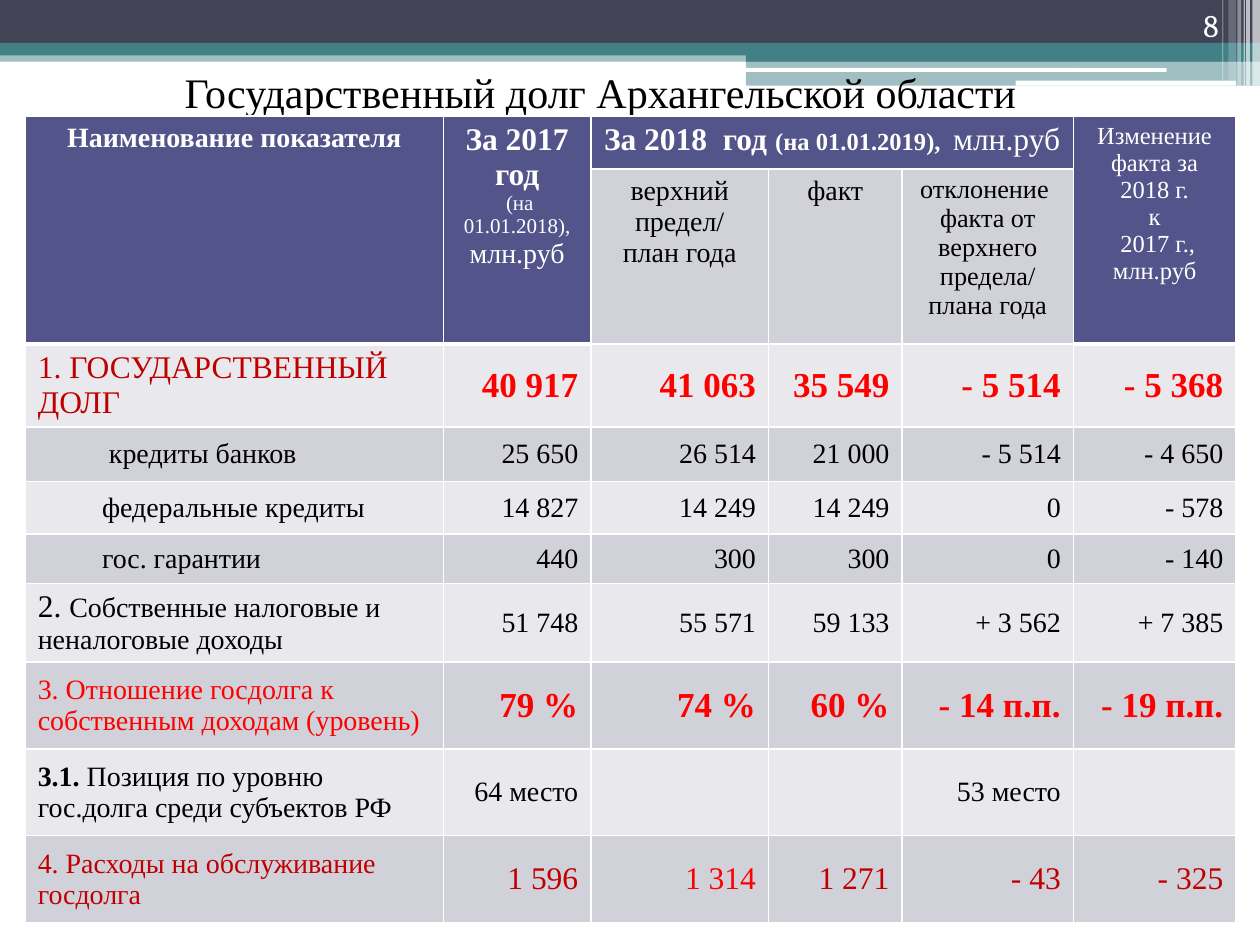
from lxml import etree
from pptx import Presentation
from pptx import util as u
from pptx.dml.color import RGBColor
from pptx.enum import shapes, text
from pptx.oxml import ns

Inches, Pt = u.Inches, u.Pt
SERIF = "Times New Roman"
COLORS = {
    "navy": "424456", "teal": "438086", "white": "FFFFFF", "black": "000000",
    "head": "53548A", "dark": "D1D1DA", "light": "E9E9ED",
    "red": "FF0000", "wine": "C00000",
}
COLS = [3.32, 1.17, 1.41, 1.06, 1.36, 1.29]
ROWS = [0.42, 1.39, 0.66, 0.43, 0.42, 0.39, 0.62, 0.69, 0.69, 0.69]

HEADS = [
    (0, 0, 1, 0, "head", 16, "white", True, [["Наименование показателя"]]),
    (0, 1, 1, 1, "head", 18, "white", True, [
        ["За 2017 год"],
        [(" ", 12, True), ("(на 01.01.2018), ", 12, False), ("млн.руб", 16, False)]]),
    (0, 2, 0, 4, "head", 18, "white", True, [
        ["За 2018  год ", ("(на 01.01.2019),  ", 14, True), ("млн.руб", 18, False)]]),
    (0, 5, 1, 5, "head", 14, "white", False,
     [["Изменение факта за 2018 г."], [" к "], [" 2017 г.,"], ["млн.руб"]]),
    (1, 2, 1, 2, "dark", 16, "black", False, [["верхний предел/"], ["план года"]]),
    (1, 3, 1, 3, "dark", 16, "black", False, [["факт"]]),
    (1, 4, 1, 4, "dark", 15, "black", False,
     [["отклонение  факта от верхнего предела/ плана года"]]),
]

PLAIN = (16, "black", False)
STRONG = (20, "red", True)
DATA = [
    ([["1. ГОСУДАРСТВЕННЫЙ ДОЛГ"]], (18, "wine"), 0, STRONG,
     ["40 917", "41 063", "35 549", "- 5 514", "- 5 368"]),
    ([[" кредиты банков"]], (16, "black"), 0.51, PLAIN,
     ["25 650", "26 514", "21 000", "- 5 514", "- 4 650"]),
    ([["федеральные кредиты"]], (16, "black"), 0.51, PLAIN,
     ["14 827", "14 249", "14 249", "0", "- 578"]),
    ([["гос. гарантии"]], (16, "black"), 0.51, PLAIN,
     ["440", "300", "300", "0", "- 140"]),
    ([[("2. ", 18, False), "Собственные налоговые и неналоговые доходы"]],
     (16, "black"), 0, PLAIN,
     ["51 748", "55 571", "59 133", "+ 3 562", "+ 7 385"]),
    ([["3. Отношение госдолга к собственным доходам (уровень)"]], (16, "red"), 0, STRONG,
     ["79 %", "74 %", "60 %", "- 14 п.п.", "- 19 п.п."]),
    ([[("3.1.", 16, True), " Позиция по уровню"], ["гос.долга среди субъектов РФ"]],
     (16, "black"), 0, PLAIN, ["64 место", "", "", "53 место", ""]),
    ([["4. Расходы на обслуживание госдолга"]], (16, "wine"), 0, (18, "wine", False),
     ["1 596", "1 314", "1 271", "- 43", "- 325"]),
]


def rgb(name):
    return RGBColor.from_string(COLORS[name])


def set_font(font, size, color, bold=False, name=SERIF):
    font.name, font.size, font.bold = name, Pt(size), bold
    font.color.rgb = rgb(color)


def add_block(s, box, color, alpha=100, kind=shapes.MSO_SHAPE.RECTANGLE):
    sp = s.shapes.add_shape(kind, *map(Inches, box))
    sp.shadow.inherit = False
    sp.line.fill.background()
    sp.fill.solid()
    sp.fill.fore_color.rgb = rgb(color)
    if alpha < 100:
        clr = sp.fill._xPr.find(".//" + ns.qn("a:srgbClr"))
        etree.SubElement(clr, ns.qn("a:alpha"), val=str(alpha * 1000))


def add_banner(s, x, y, w):
    accent = x + 5.92
    rest = x + w - accent
    add_block(s, (x, y + 0.4, w, 0.09), "teal", 50)
    add_block(s, (x, y, w, 0.34), "navy")
    add_block(s, (x, y + 0.34, w, 0.1), "teal")
    add_block(s, (accent, y + 0.39, rest, 0.1), "teal")
    add_block(s, (accent, y + 0.48, rest, 0.2), "teal", 50)
    rounded = shapes.MSO_SHAPE.ROUNDED_RECTANGLE
    add_block(s, (x + 5.91, y + 0.54, 3.35, 0.03), "white", kind=rounded)
    add_block(s, (x + 8.06, y + 0.64, 1.75, 0.04), "white", kind=rounded)
    stripes = [(9.94, 0.06, 0.68, 65), (9.89, 0.03, 0.68, 65), (9.87, 0.01, 0.68, 60),
               (9.82, 0.03, 0.68, 40), (9.75, 0.06, 0.64, 20), (9.7, 0.01, 0.64, 30)]
    for left, width, height, alpha in stripes:
        add_block(s, (x + left, y, width, height), "white", alpha)


def add_title(s, x, y, w, h):
    title = s.shapes.title
    title.left, title.top, title.width, title.height = map(Inches, (x, y, w, h))
    s.shapes._spTree.append(title._element)
    tf = title.text_frame
    tf.text = "Государственный долг Архангельской области"
    tf.vertical_anchor = text.MSO_ANCHOR.MIDDLE
    p = tf.paragraphs[0]
    p.alignment = text.PP_ALIGN.CENTER
    set_font(p.font, 24, "black")


def add_number(s, x, y, w, h):
    tf = s.shapes.add_textbox(*map(Inches, (x, y, w, h))).text_frame
    tf.word_wrap = True
    tf.vertical_anchor = text.MSO_ANCHOR.BOTTOM
    p = tf.paragraphs[0]
    p.text = "8"
    p.alignment = text.PP_ALIGN.RIGHT
    set_font(p.font, 18, "white", name="Cambria")


def paint_cell(cell, color, bottom=1):
    cell.fill.solid()
    cell.fill.fore_color.rgb = rgb(color)
    tcPr = cell._tc.get_or_add_tcPr()
    for i, side in enumerate("LRTB"):
        width = Pt(bottom if side == "B" else 1)
        ln = etree.Element(ns.qn("a:ln" + side), w=str(width))
        fill = etree.SubElement(ln, ns.qn("a:solidFill"))
        etree.SubElement(fill, ns.qn("a:srgbClr"), val=COLORS["white"])
        tcPr.insert(i, ln)


def write_cell(cell, paragraphs, size, color, bold, align, indent=0):
    tf = cell.text_frame
    for i, runs in enumerate(paragraphs):
        p = tf.add_paragraph() if i else tf.paragraphs[0]
        p.alignment = align
        set_font(p.font, size, color, bold)
        if indent:
            p._p.get_or_add_pPr().set("marL", str(Inches(indent)))
        for run in runs:
            content, run_size, run_bold = (run, size, bold) if isinstance(run, str) else run
            r = p.add_run()
            r.text = content
            set_font(r.font, run_size, color, run_bold)


def add_debt_table(s, x, y):
    box = (x, y, sum(COLS), sum(ROWS))
    table = s.shapes.add_table(len(ROWS), len(COLS), *map(Inches, box)).table
    table.first_row = table.horz_banding = False
    for col, width in zip(table.columns, COLS):
        col.width = Inches(width)
    for row, height in zip(table.rows, ROWS):
        row.height = Inches(height)

    for top, left, last_row, last_col, fill, size, color, bold, paragraphs in HEADS:
        cell = table.cell(top, left)
        if (top, left) != (last_row, last_col):
            cell.merge(table.cell(last_row, last_col))
        for i in range(top, last_row + 1):
            for j in range(left, last_col + 1):
                paint_cell(table.cell(i, j), fill, 3 if last_row > top else 1)
        write_cell(cell, paragraphs, size, color, bold, text.PP_ALIGN.CENTER)

    for i, (label, (size, color), indent, style, values) in enumerate(DATA, 2):
        for j in range(len(COLS)):
            cell = table.cell(i, j)
            paint_cell(cell, "dark" if i % 2 else "light")
            cell.vertical_anchor = text.MSO_ANCHOR.MIDDLE
            if j == 0:
                write_cell(cell, label, size, color, False, text.PP_ALIGN.LEFT, indent)
            elif values[j - 1]:
                tone = "red" if values[j - 1] == "1 314" else style[1]
                write_cell(cell, [[values[j - 1]]], style[0], tone, style[2],
                           text.PP_ALIGN.RIGHT)


def main():
    prs = Presentation()
    prs.slide_width, prs.slide_height = Inches(10), Inches(7.5)
    s = prs.slides.add_slide(prs.slide_layouts[5])
    add_banner(s, 0, 0, 10)
    add_title(s, 0.2, 0.52, 9.13, 0.42)
    add_debt_table(s, 0.2, 0.92)
    add_number(s, 8.94, 0, 0.83, 0.4)
    prs.save("out.pptx")


if __name__ == "__main__":
    main()
